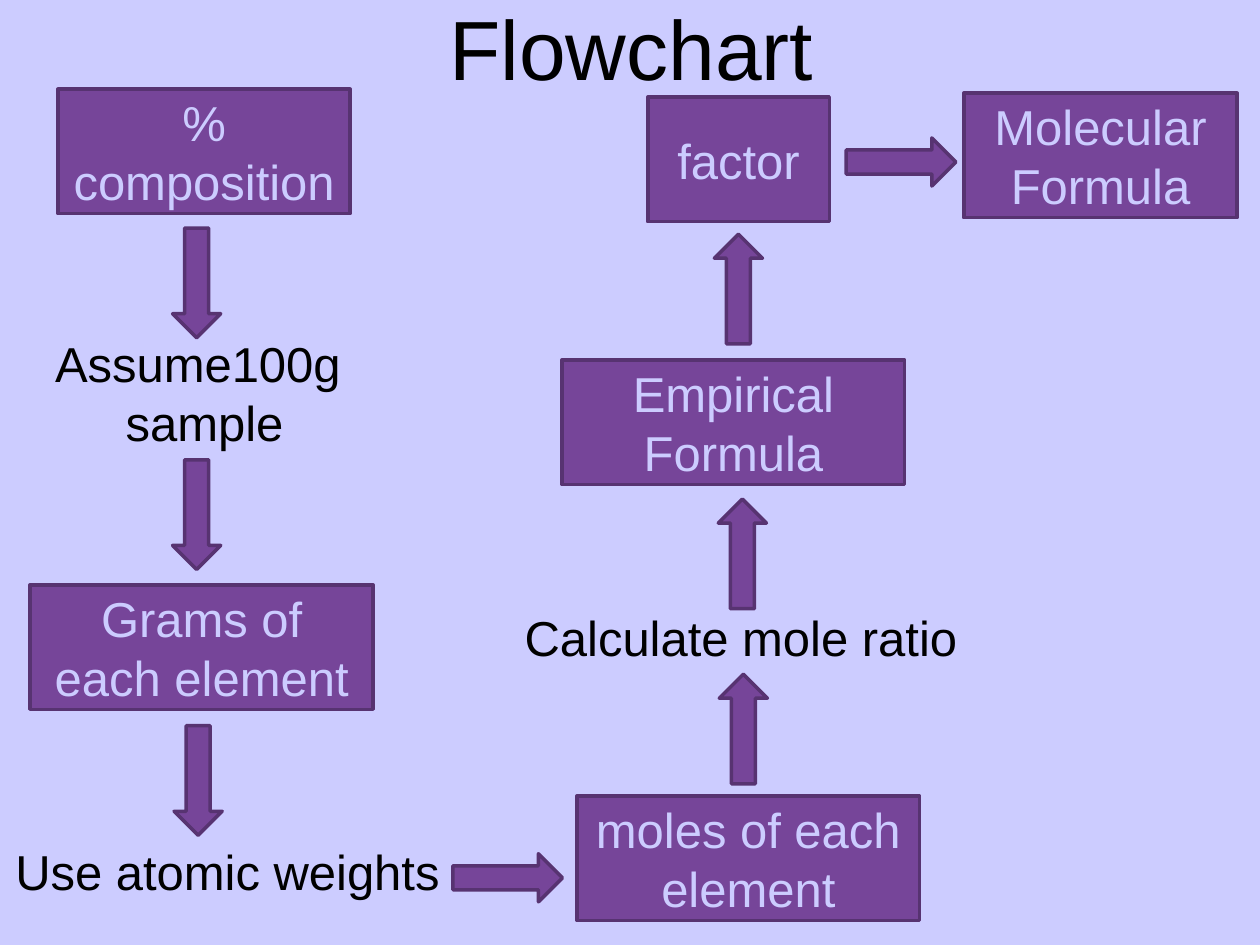
from pptx import Presentation
from pptx.dml.color import RGBColor
from pptx.enum.shapes import MSO_SHAPE
from pptx.enum.text import MSO_ANCHOR, MSO_AUTO_SIZE, PP_ALIGN
from pptx.util import Cm, Pt

RECTANGLE, DOWN_ARROW = MSO_SHAPE.RECTANGLE, MSO_SHAPE.DOWN_ARROW
TOP, MIDDLE, BOTTOM = MSO_ANCHOR.TOP, MSO_ANCHOR.MIDDLE, MSO_ANCHOR.BOTTOM
CENTER = PP_ALIGN.CENTER
FIT_SHAPE = MSO_AUTO_SIZE.SHAPE_TO_FIT_TEXT

LAVENDER = RGBColor(0xCC, 0xCC, 0xFF)
PURPLE = RGBColor(0x76, 0x45, 0x99)
DARK_PURPLE = RGBColor(0x57, 0x33, 0x71)
BLACK = RGBColor(0, 0, 0)

BOX_HEIGHT = 2.51
ARROW_WIDTH, ARROW_LENGTH = 0.97, 2.21
DOWN, UP, RIGHT = 0, 180, 270


def write_text(shape, text, size=28, color=BLACK, anchor=TOP, wrap=True):
    """Fill the shape with centred text, one paragraph per line of text."""
    frame = shape.text_frame
    frame.word_wrap = wrap
    frame.vertical_anchor = anchor
    frame.text = text
    for para in frame.paragraphs:
        para.alignment = CENTER
        para.font.name = "Arial"
        para.font.size = Pt(size)
        para.font.color.rgb = color


def add_purple_shape(kind, left, top, width, height):
    shape = page.shapes.add_shape(kind, Cm(left), Cm(top), Cm(width), Cm(height))
    shape.shadow.inherit = False
    shape.fill.solid()
    shape.fill.fore_color.rgb = PURPLE
    shape.line.color.rgb = DARK_PURPLE
    shape.line.width = Pt(2)
    return shape


deck = Presentation()
deck.slide_width, deck.slide_height = Cm(25.4), Cm(19.05)
page = deck.slides.add_slide(deck.slide_layouts[6])
page.background.fill.solid()
page.background.fill.fore_color.rgb = LAVENDER

title = page.shapes.add_textbox(Cm(1.3), Cm(0), Cm(22.86), Cm(2.08))
write_text(title, "Flowchart", size=48, anchor=BOTTOM)

# Quantities: text, left, top, width
quantities = [
    ("% composition", 1.17, 1.8, 5.89),
    ("Grams of each element", 0.61, 11.79, 6.91),
    ("moles of each element", 11.63, 16.05, 6.91),
    ("Empirical Formula", 11.33, 7.26, 6.91),
    ("factor", 13.06, 1.96, 3.66),
    ("Molecular\nFormula", 19.43, 1.88, 5.51),
]
for text, left, top, width in quantities:
    box = add_purple_shape(RECTANGLE, left, top, width, BOX_HEIGHT)
    write_text(box, text, color=LAVENDER, anchor=MIDDLE)

# Steps between quantities: text, left, top, width, height
steps = [
    ("Assume100g \nsample", 0.81, 6.6, 6.63, 2.64),
    ("Use atomic weights", 0, 16.84, 9.17, 1.45),
    ("Calculate mole ratio", 10.26, 12.12, 9.35, 1.45),
]
for text, left, top, width, height in steps:
    label = page.shapes.add_textbox(Cm(left), Cm(top), Cm(width), Cm(height))
    write_text(label, text, wrap=False)
    label.text_frame.auto_size = FIT_SHAPE

# Arrows: left and top before turning, direction
arrows = [
    (3.48, 4.6, DOWN),
    (3.48, 9.27, DOWN),
    (3.51, 14.63, DOWN),
    (9.75, 16.59, RIGHT),
    (14.5, 13.59, UP),
    (14.48, 10.06, UP),
    (14.4, 4.72, UP),
    (17.68, 2.16, RIGHT),
]
for left, top, direction in arrows:
    arrow = add_purple_shape(DOWN_ARROW, left, top, ARROW_WIDTH, ARROW_LENGTH)
    arrow.rotation = direction

deck.save("out.pptx")
